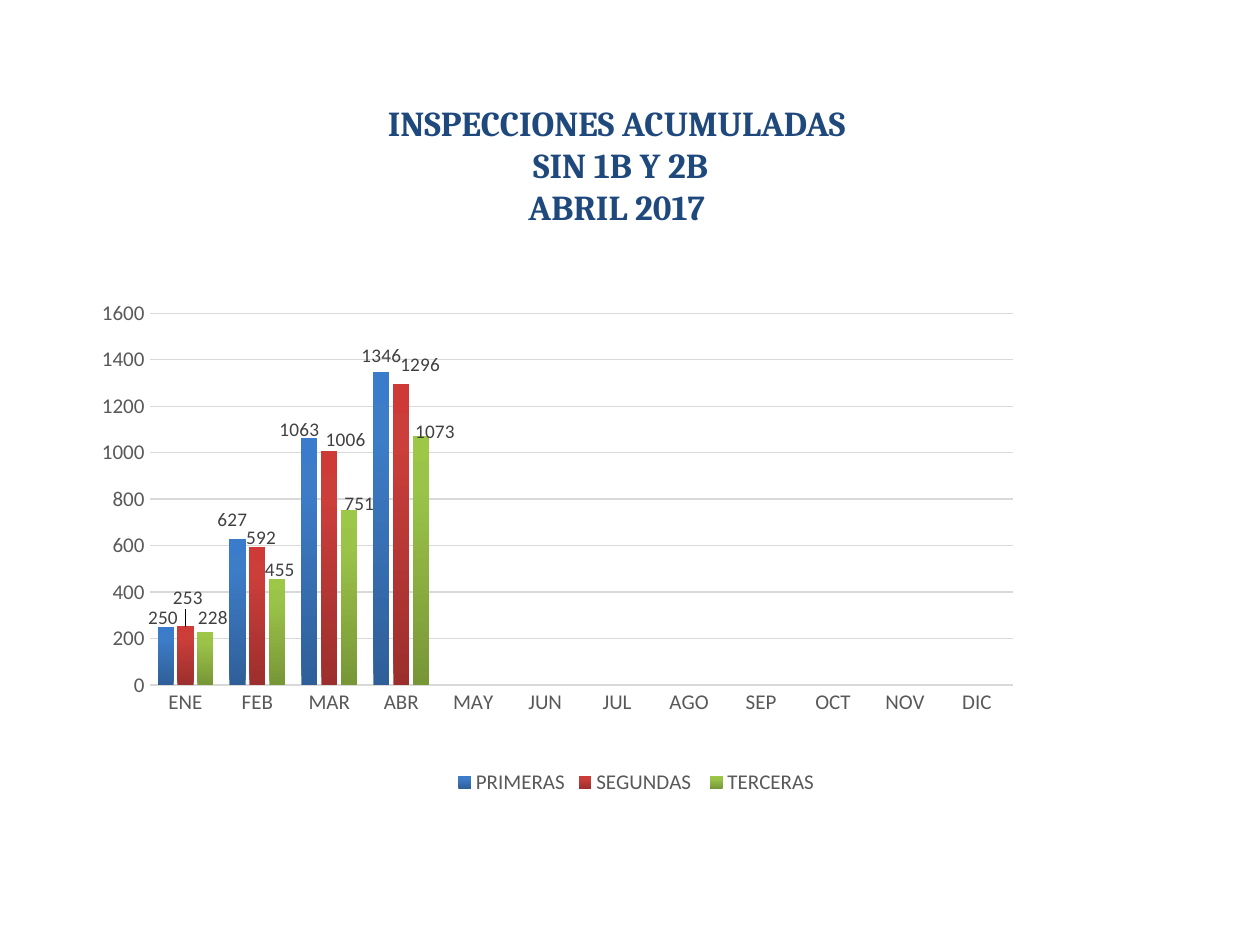
from copy import deepcopy

from lxml import etree
from pptx import Presentation
from pptx.chart.data import CategoryChartData
from pptx.dml.color import RGBColor
from pptx.enum.chart import (XL_CHART_TYPE, XL_LABEL_POSITION,
                             XL_LEGEND_POSITION, XL_TICK_MARK)
from pptx.enum.text import PP_ALIGN
from pptx.oxml.ns import qn
from pptx.util import Inches, Pt

COLUMNS = XL_CHART_TYPE.COLUMN_CLUSTERED
OUTSIDE = XL_LABEL_POSITION.OUTSIDE_END
BOTTOM = XL_LEGEND_POSITION.BOTTOM
NO_TICK = XL_TICK_MARK.NONE
CENTER = PP_ALIGN.CENTER

TITLE = ["INSPECCIONES ACUMULADAS", " SIN 1B Y 2B", "ABRIL 2017"]
MONTHS = "ENE FEB MAR ABR MAY JUN JUL AGO SEP OCT NOV DIC".split()
STOPS = (0, 0.8, 1)
# Label offsets are inches from the default place; None keeps the default
SERIES = [
    {"name": "PRIMERAS", "values": [250, 627, 1063, 1346],
     "colors": ["2F5F99", "3D7CC7", "3A7CCB"],
     "offsets": [(-0.02, 0.06), (-0.04, -0.02), (-0.08, 0.07), None]},
    {"name": "SEGUNDAS ", "values": [253, 592, 1006, 1296],
     "colors": ["9C2F2D", "CB3E3A", "CE3B37"],
     "offsets": [(0.02, -0.09), (0.03, 0.06), (0.13, 0.04), (0.15, -0.02)]},
    {"name": "TERCERAS", "values": [228, 455, 751, 1073],
     "colors": ["779737", "9BC348", "9DC746"],
     "offsets": [(0.06, 0.02), (0.02, 0.06), (0.08, 0.08), (0.11, 0.1)]},
]
TITLE_FONT = {"name": "Cambria", "size": Pt(20), "bold": True}
BASE_FONT = {"name": "Calibri", "size": Pt(10)}
AXIS_FONT = {"name": "Calibri", "size": Pt(12), "bold": False}
LABEL_FONT = {"name": "Calibri", "size": Pt(11), "bold": False}


def rgb(value):
    return RGBColor.from_string(value)


def set_font(font, style, color):
    for key, value in style.items():
        setattr(font, key, value)
    font.color.rgb = rgb(color)


def set_line(line, color, width):
    line.color.rgb = rgb(color)
    line.width = Pt(width)


def make_layout(**values):
    """Return a manual c:layout element."""
    layout = etree.Element(qn("c:layout"))
    manual = etree.SubElement(layout, qn("c:manualLayout"))
    for key, value in values.items():
        etree.SubElement(manual, qn("c:" + key)).set("val", str(value))
    return layout


def add_title(s, left, top, width, height):
    box = s.shapes.add_textbox(Inches(left), Inches(top),
                               Inches(width), Inches(height))
    tf = box.text_frame
    tf.word_wrap = True
    for i, text in enumerate(TITLE):
        p = tf.paragraphs[0] if i == 0 else tf.add_paragraph()
        p.alignment = CENTER
        r = p.add_run()
        r.text = text
        set_font(r.font, TITLE_FONT, "1F497D")


def style_axes(chart):
    for axis in (chart.category_axis, chart.value_axis):
        axis.major_tick_mark = axis.minor_tick_mark = NO_TICK
        set_font(axis.tick_labels.font, AXIS_FONT, "595959")
    set_line(chart.category_axis.format.line, "D9D9D9", 1)
    values = chart.value_axis
    values.minimum_scale, values.maximum_scale = 0, 1600
    values.major_unit = 200
    values.format.line.fill.background()
    set_line(values.major_gridlines.format.line, "D9D9D9", 0.75)


def fill_gradient(series, colors):
    fill = series.format.fill
    fill.gradient()
    fill.gradient_angle = 90
    stops = series._element.xpath(".//a:gsLst")[0]
    stops.append(deepcopy(stops[-1]))
    for stop, position, color in zip(fill.gradient_stops, STOPS, colors):
        stop.position = position
        stop.color.rgb = rgb(color)


def label_series(series, offsets, width, height):
    labels = series.data_labels
    labels.show_value = True
    labels.position = OUTSIDE
    set_font(labels.font, LABEL_FONT, "404040")
    for i, offset in enumerate(offsets):
        if offset is None:
            continue
        label = series.points[i].data_label
        set_font(label.font, LABEL_FONT, "404040")
        label.position = OUTSIDE
        idx = series._element.xpath(f"c:dLbls/c:dLbl/c:idx[@val='{i}']")[0]
        idx.addnext(make_layout(x=round(offset[0] / width, 4),
                                y=round(offset[1] / height, 4)))


def add_inspections_chart(s, left, top, width, height):
    data = CategoryChartData()
    data.categories = MONTHS
    for item in SERIES:
        blanks = [None] * (len(MONTHS) - len(item["values"]))
        data.add_series(item["name"], item["values"] + blanks)
    chart = s.shapes.add_chart(COLUMNS, Inches(left), Inches(top),
                               Inches(width), Inches(height), data).chart
    chart.has_title = False
    set_font(chart.font, BASE_FONT, "000000")
    style_axes(chart)

    # Columns
    plot = chart.plots[0]
    plot.gap_width, plot.overlap = 100, -24
    plot.vary_by_categories = False
    for series, item in zip(plot.series, SERIES):
        fill_gradient(series, item["colors"])
        label_series(series, item["offsets"], width, height)

    # Legend
    chart.has_legend = True
    chart.legend.position = BOTTOM
    chart.legend.include_in_layout = False
    set_font(chart.legend.font, AXIS_FONT, "595959")

    # Plot area
    area = chart._chartSpace.xpath("c:chart/c:plotArea")[0]
    for old in area.xpath("c:layout"):
        area.remove(old)
    area.insert(0, make_layout(layoutTarget="inner", xMode="edge",
                               yMode="edge", x=0.089, y=0.039,
                               w=0.729, h=0.734))


def main():
    prs = Presentation()
    prs.slide_width, prs.slide_height = Inches(10), Inches(7.5)
    s = prs.slides.add_slide(prs.slide_layouts[6])
    add_title(s, 1.69, 0.76, 6.41, 1.11)
    add_inspections_chart(s, 0.35, 2.33, 9.4, 4.02)
    prs.save("out.pptx")


if __name__ == "__main__":
    main()
